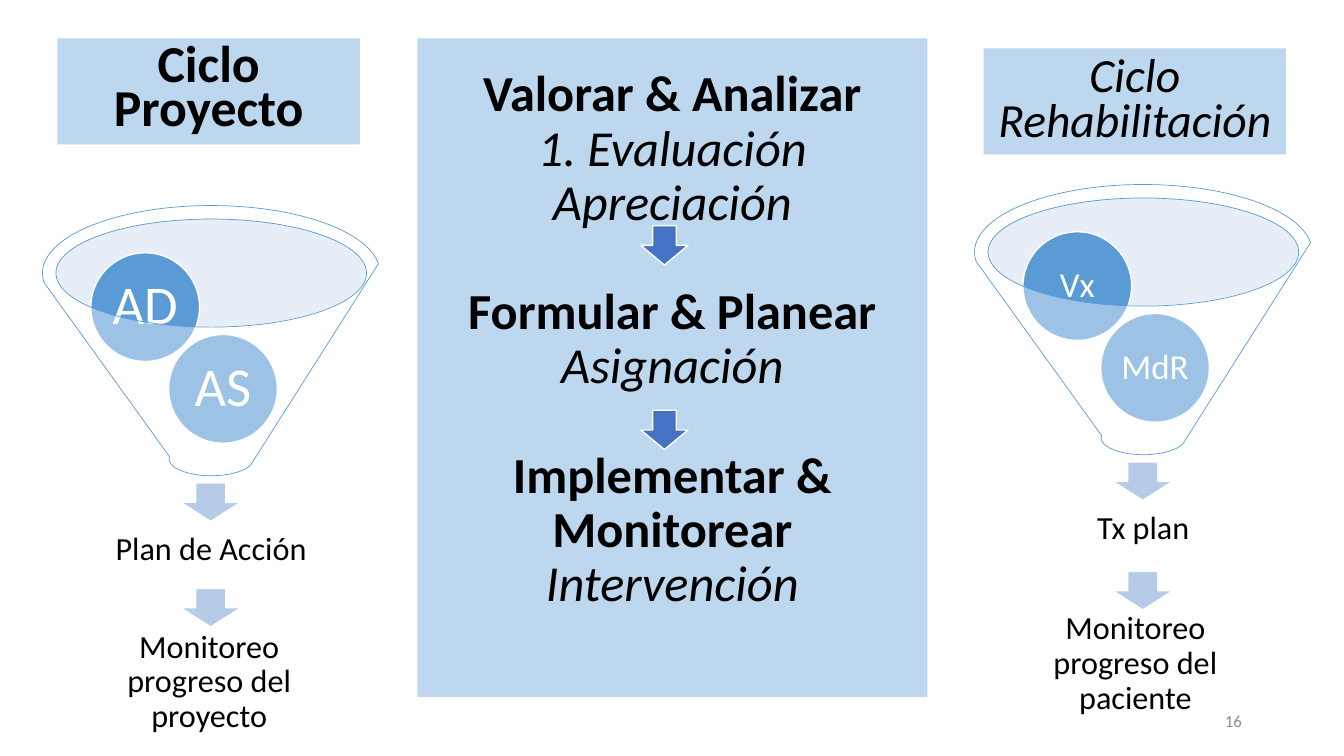
"""Build a slide that sets a project cycle and a rehabilitation cycle side by side."""
from lxml.etree import SubElement
from pptx import Presentation
from pptx.dml.color import RGBColor
from pptx.enum.shapes import MSO_SHAPE
from pptx.enum.text import MSO_ANCHOR, MSO_AUTO_SIZE, PP_ALIGN
from pptx.oxml.ns import qn
from pptx.util import Cm, Pt

COLOURS = {
    "panel": "BDD7EE", "text": "000000", "white": "FFFFFF", "number": "8C8C8C",
    "circle": "5B9BD5", "mouth": "C4D5EB", "step": "B5CBE7", "arrow": "4472C4",
}
PHASES = [
    ("Valorar & Analizar", "1. Evaluación Apreciación"),
    ("Formular & Planear", "Asignación"),
    ("Implementar & Monitorear", "Intervención"),
]
CYCLES = [
    {
        "heading": ["Ciclo Proyecto"], "heading_at": (1.45, 0.97),
        "heading_style": {"size": 37, "bold": True, "spacing": 0.7},
        "funnel_at": (1.07, 5.18), "inputs": ["AS", "AD"], "input_size": 39,
        "plan": "Plan de Acción",
        "follow_up": "Monitoreo progreso del proyecto",
        "follow_up_at": (1.63, 16.28), "follow_up_arrow_top": 14.83,
    },
    {
        "heading": ["Ciclo", "Rehabilitación"], "heading_at": (24.79, 1.22),
        "heading_style": {"size": 34, "italic": True, "spacing": 0.8},
        "funnel_at": (24.56, 4.65), "inputs": ["MdR", "Vx"], "input_size": 25,
        "plan": "Tx plan",
        "follow_up": "Monitoreo progreso del paciente",
        "follow_up_at": (24.97, 15.82), "follow_up_arrow_top": 14.4,
    },
]
PAGE_NUMBER = "16"

HEADING = (7.62, 2.67)
FUNNEL = (8.51, 6.81)
MOUTH = (7.82, 2.72)
MOUTH_OFFSET = (0.33, 0.33)
CIRCLE = (2.74, 2.74)
CIRCLE_OFFSETS = [(3.18, 3.25), (1.22, 1.19)]
STEP_ARROW = (1.52, 0.97)
STEP_OFFSET = (3.48, 6.99)
CAPTION = (7.29, 1.83)
PLAN_OFFSET = (0.61, 7.77)
PHASE_ARROW = (1.19, 0.99)
PHASE_ARROW_LEFT = 16.15
PHASE_ARROW_TOPS = [5.69, 10.34]


def style(para, size, colour="text", bold=False, italic=False, spacing=0.9,
          align=PP_ALIGN.CENTER):
    para.alignment = align
    para.line_spacing = spacing
    para.space_before = para.space_after = Pt(0)
    font = para.font
    font.name, font.size, font.bold, font.italic = "Calibri", Pt(size), bold, italic
    font.color.rgb = RGBColor.from_string(COLOURS[colour])


def write(shape, lines, inset=None, **look):
    frame = shape.text_frame
    frame.word_wrap = True
    frame.vertical_anchor = MSO_ANCHOR.MIDDLE
    if inset is not None:
        frame.margin_left = frame.margin_right = Cm(inset)
        frame.margin_top = frame.margin_bottom = Cm(inset)
    frame.text = "\n".join(lines)
    for para in frame.paragraphs:
        style(para, **look)


def place(page, kind, at, extent, fill, line=None, width=1, opacity=None):
    shape = page.shapes.add_shape(kind, *map(Cm, at + extent))
    shape.shadow.inherit = False
    shape.fill.solid()
    shape.fill.fore_color.rgb = RGBColor.from_string(COLOURS[fill])
    if opacity is not None:
        colour = shape.element.spPr.find(qn("a:solidFill"))[0]
        SubElement(colour, qn("a:alpha")).set("val", str(opacity * 1000))
    if line:
        shape.line.color.rgb = RGBColor.from_string(COLOURS[line])
        shape.line.width = Pt(width)
    else:
        shape.line.fill.background()
    return shape


def label(page, text, at, extent, **look):
    box = page.shapes.add_textbox(*map(Cm, at + extent))
    write(box, [text], **look)


def shifted(at, offset):
    return at[0] + offset[0], at[1] + offset[1]


def draw_phases(page):
    title = page.shapes.title
    title.left, title.top, title.width, title.height = map(Cm, (10.52, 0.97, 12.85, 16.59))
    title.fill.solid()
    title.fill.fore_color.rgb = RGBColor.from_string(COLOURS["panel"])
    write(title, [line for phase in PHASES for line in phase], size=36)
    frame = title.text_frame
    frame.auto_size = MSO_AUTO_SIZE.NONE
    frame.margin_bottom = Cm(1.5)
    for index, para in enumerate(frame.paragraphs):
        para.font.bold = index % 2 == 0
        para.font.italic = index % 2 == 1
        if index in (2, 4):
            para.space_before = Pt(39)


def draw_cycle(page, cycle):
    funnel = cycle["funnel_at"]
    place(page, MSO_SHAPE.OVAL, shifted(funnel, MOUTH_OFFSET), MOUTH, "mouth", opacity=40)
    step = shifted(funnel, STEP_OFFSET)
    for top in (step[1], cycle["follow_up_arrow_top"]):
        place(page, MSO_SHAPE.DOWN_ARROW, (step[0], top), STEP_ARROW, "step", "white")
    for name, offset in zip(cycle["inputs"], CIRCLE_OFFSETS):
        circle = place(page, MSO_SHAPE.OVAL, shifted(funnel, offset), CIRCLE,
                       "circle", "white")
        write(circle, [name], inset=0.1, size=cycle["input_size"], colour="white")
    place(page, MSO_SHAPE.FUNNEL, funnel, FUNNEL, "white", "circle", 0.5, opacity=40)
    for text, at in ((cycle["plan"], shifted(funnel, PLAN_OFFSET)),
                     (cycle["follow_up"], cycle["follow_up_at"])):
        label(page, text, at, CAPTION, inset=0.46, size=23)
    heading = place(page, MSO_SHAPE.RECTANGLE, cycle["heading_at"], HEADING, "panel")
    write(heading, cycle["heading"], **cycle["heading_style"])


def main():
    deck = Presentation()
    deck.slide_width, deck.slide_height = Cm(33.87), Cm(19.05)
    page = deck.slides.add_slide(deck.slide_layouts[5])
    draw_phases(page)
    for cycle in CYCLES:
        draw_cycle(page, cycle)
    for top in PHASE_ARROW_TOPS:
        place(page, MSO_SHAPE.DOWN_ARROW, (PHASE_ARROW_LEFT, top), PHASE_ARROW,
              "arrow", "white")
    label(page, PAGE_NUMBER, (23.93, 17.65), (7.62, 1.02), size=12, colour="number",
          spacing=1.0, align=PP_ALIGN.RIGHT)
    deck.save("out.pptx")


if __name__ == "__main__":
    main()
